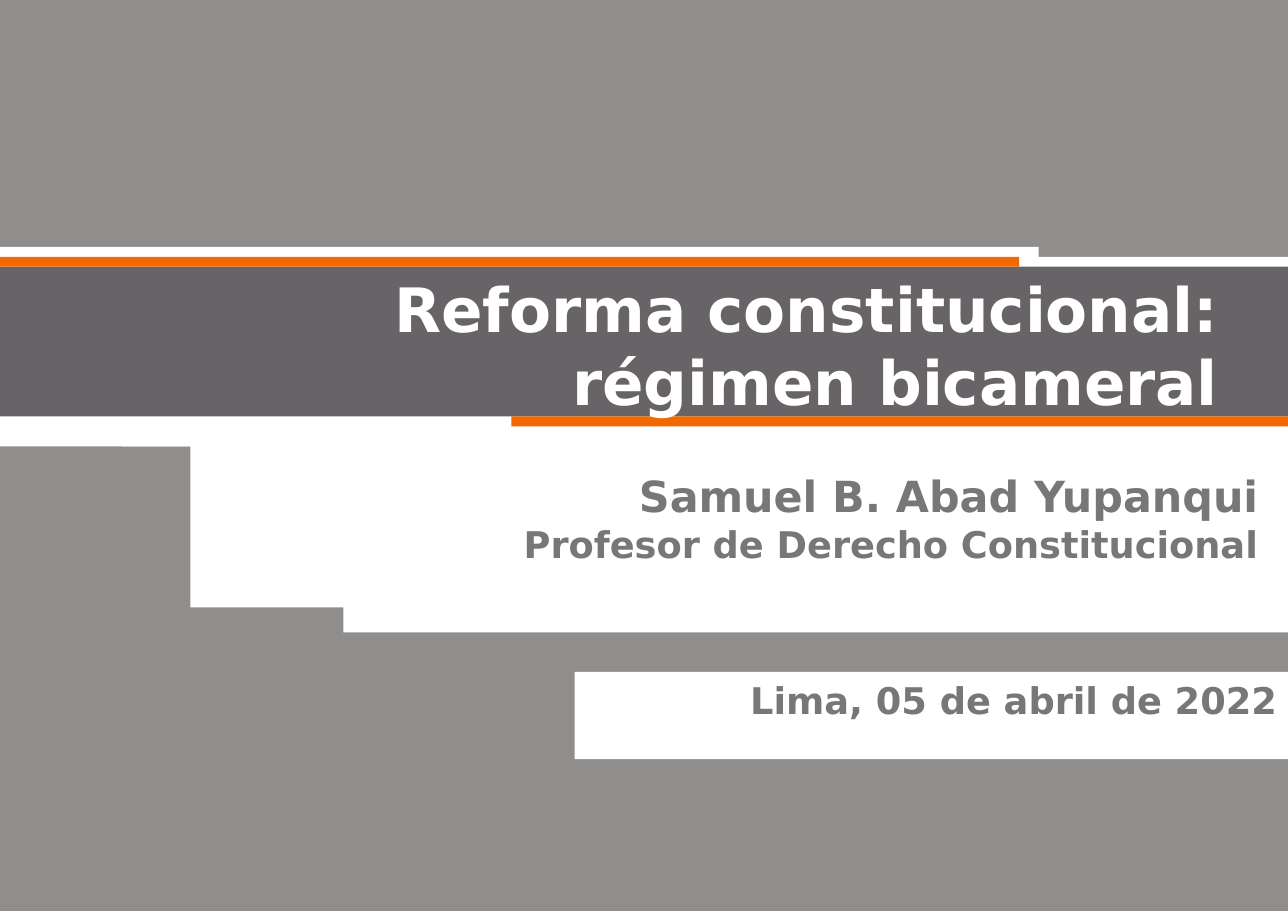
from dataclasses import dataclass

from pptx import Presentation
from pptx.dml.color import RGBColor
from pptx.enum.shapes import MSO_SHAPE
from pptx.enum.text import MSO_ANCHOR, PP_ALIGN
from pptx.util import Cm, Pt

RECTANGLE = MSO_SHAPE.RECTANGLE
RIGHT = PP_ALIGN.RIGHT
TOP, MIDDLE = MSO_ANCHOR.TOP, MSO_ANCHOR.MIDDLE

PAGE_WIDTH, PAGE_HEIGHT = 29.7, 21
BAND_TOP, BAND_BOTTOM = 6.15, 9.6
STRIPE_HEIGHT = 0.23


@dataclass(frozen=True)
class Theme:
    font: str = "DejaVu Sans"
    background: str = "908E8D"
    panel: str = "FFFFFF"
    band: str = "676366"
    stripe: str = "F16900"
    title_text: str = "FFFFFF"
    body_text: str = "777777"
    title_size: int = 40
    name_size: int = 28
    detail_size: int = 24


THEME = Theme()


def paint(shape, color):
    shape.shadow.inherit = False
    shape.fill.solid()
    shape.fill.fore_color.rgb = RGBColor.from_string(color)
    shape.line.fill.background()


def add_block(page, left, top, right, bottom, color):
    """Add a plain rectangle given by its four edges in centimetres."""
    block = page.shapes.add_shape(
        RECTANGLE, Cm(left), Cm(top), Cm(right - left), Cm(bottom - top))
    paint(block, color)
    return block


def add_outline(page, points, color):
    corners = [(Cm(x), Cm(y)) for x, y in points]
    builder = page.shapes.build_freeform(*corners[0])
    builder.add_line_segments(corners[1:], close=True)
    paint(builder.convert_to_shape(), color)


def add_text_box(page, left, top, width, height):
    return page.shapes.add_textbox(Cm(left), Cm(top), Cm(width), Cm(height))


def write(box, *lines, color, anchor=MIDDLE):
    """Fill a box with right-aligned bold lines, each a (text, size) pair."""
    frame = box.text_frame
    frame.word_wrap = True
    frame.vertical_anchor = anchor
    for index, (text, size) in enumerate(lines):
        para = frame.add_paragraph() if index else frame.paragraphs[0]
        para.alignment = RIGHT
        span = para.add_run()
        span.text = text
        span.font.name = THEME.font
        span.font.size = Pt(size)
        span.font.bold = True
        span.font.color.rgb = RGBColor.from_string(color)


def add_backdrop(page):
    add_block(page, 0, 0, PAGE_WIDTH, PAGE_HEIGHT, THEME.background)
    stepped_panel = [(4.39, 14), (7.92, 14), (7.92, 14.58),
                     (PAGE_WIDTH, 14.58), (PAGE_WIDTH, 10.06), (4.39, 10.06)]
    add_outline(page, stepped_panel, THEME.panel)
    add_block(page, 0, 5.69, 23.95, 10.29, THEME.panel)
    add_block(page, 2.82, 5.92, PAGE_WIDTH, 10.29, THEME.panel)


def add_title_band(page):
    add_block(page, 0, BAND_TOP, PAGE_WIDTH, BAND_BOTTOM, THEME.band)
    add_block(page, 0, BAND_TOP - STRIPE_HEIGHT, 23.5, BAND_TOP, THEME.stripe)
    add_block(page, 11.79, BAND_BOTTOM, PAGE_WIDTH,
              BAND_BOTTOM + STRIPE_HEIGHT, THEME.stripe)


def main():
    deck = Presentation()
    deck.slide_width, deck.slide_height = Cm(PAGE_WIDTH), Cm(PAGE_HEIGHT)
    page = deck.slides.add_slide(deck.slide_layouts[6])

    add_backdrop(page)
    add_title_band(page)

    author = add_text_box(page, 11.05, 10.69, 18.21, 2.49)
    write(author,
          ("Samuel B. Abad Yupanqui", THEME.name_size),
          ("Profesor de Derecho Constitucional", THEME.detail_size),
          color=THEME.body_text)

    title = add_text_box(page, 1.85, 6.1, 26.49, 3.68)
    write(title,
          ("Reforma constitucional: régimen bicameral", THEME.title_size),
          color=THEME.title_text)

    date = add_block(page, 13.25, 15.49, PAGE_WIDTH, 17.5, THEME.panel)
    write(date, ("Lima, 05 de abril de 2022", THEME.detail_size),
          color=THEME.body_text, anchor=TOP)

    deck.save("out.pptx")


if __name__ == "__main__":
    main()
